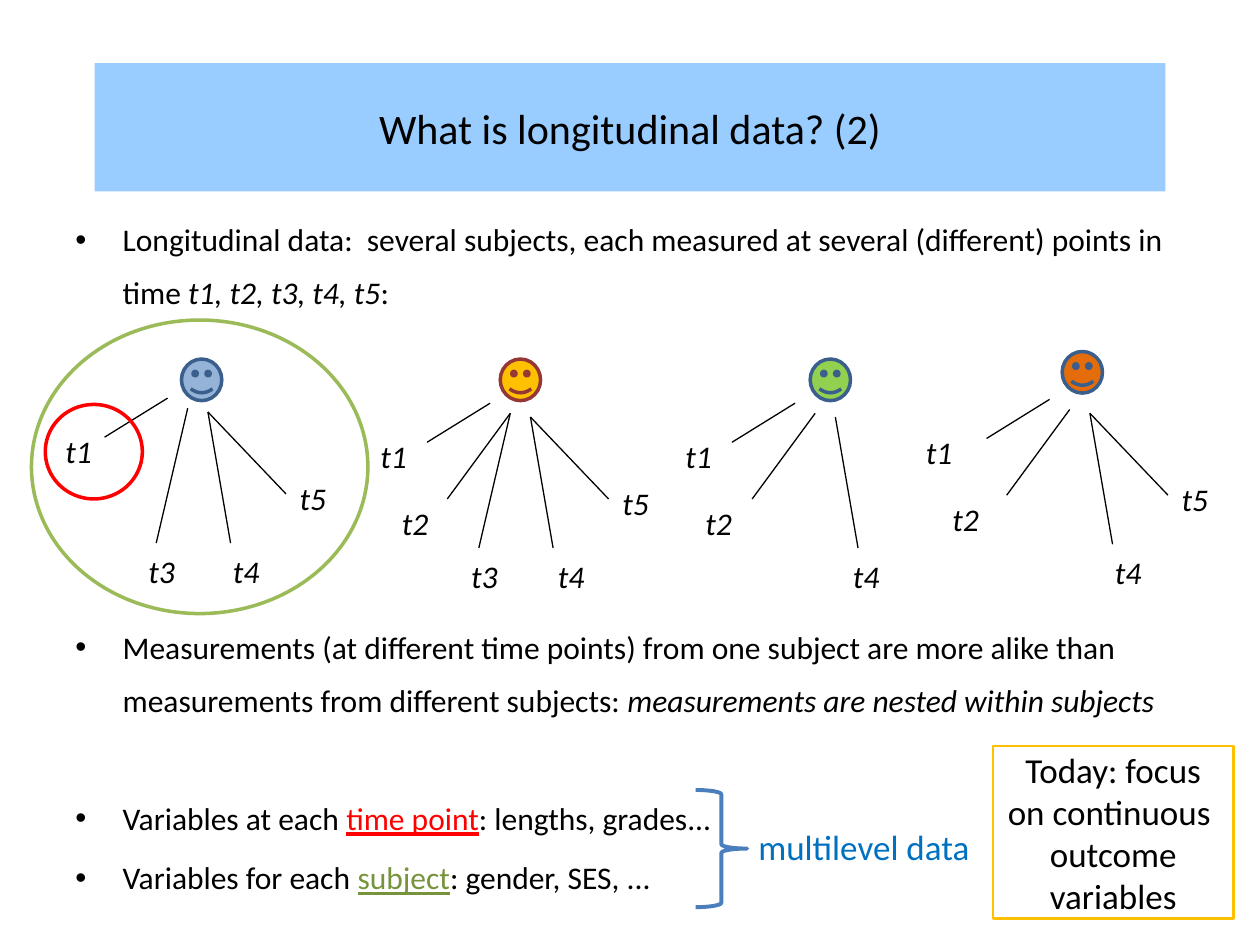
from dataclasses import dataclass

from lxml import etree
from pptx import Presentation
from pptx.dml.color import RGBColor
from pptx.enum.shapes import MSO_CONNECTOR, MSO_SHAPE
from pptx.enum.text import MSO_ANCHOR, PP_ALIGN
from pptx.oxml.ns import qn
from pptx.slide import Slide
from pptx.util import Inches, Pt

STRAIGHT = MSO_CONNECTOR.STRAIGHT
FACE, OVAL = MSO_SHAPE.SMILEY_FACE, MSO_SHAPE.OVAL
BRACE, RECTANGLE = MSO_SHAPE.RIGHT_BRACE, MSO_SHAPE.RECTANGLE
MIDDLE = MSO_ANCHOR.MIDDLE
CENTER, LEFT = PP_ALIGN.CENTER, PP_ALIGN.LEFT
TITLE_ONLY = 5

COLORS = {
    "black": "000000", "white": "FFFFFF", "banner": "99CCFF",
    "red": "FF0000", "olive": "77933C", "green": "9BBB59",
    "blue": "0070C0", "brace": "4B7EBC", "amber": "FFC000",
    "navy": "3A5F8C", "maroon": "953735", "sky": "95B3D7",
    "lime": "92D050", "orange": "E46C0A",
}

BULLETS = [
    (3.6, [
        ("Longitudinal data:  several subjects, each measured at several "
         "(different) points in time ", {}),
        ("t1, t2, t3, t4, t5", {"italic": True}),
        (":", {}),
    ]),
    (172.6, [
        ("Measurements (at different time points) from one subject are more "
         "alike than measurements from different subjects: ", {}),
        ("measurements are nested within subjects", {"italic": True}),
    ]),
    (37.3, [
        ("Variables at each ", {}),
        ("time point", {"color": "red", "underline": True}),
        (": lengths, grades...", {}),
    ]),
    (3.6, [
        ("Variables for each ", {}),
        ("subject", {"color": "olive", "underline": True}),
        (": gender, SES, ...", {}),
    ]),
]

BRANCHES = {
    "t1": (-0.32, -0.11, -0.82, 0.2),
    "t2": (-0.16, -0.03, -0.66, 0.65),
    "t3": (-0.16, -0.03, -0.41, 1.04),
    "t4": (0, 0, 0.18, 1.04),
    "t5": (0, 0, 0.62, 0.65),
}
LABEL_DROPS = {"t1": 0.11, "t2": 0.64, "t3": 1.06, "t4": 1.06, "t5": 0.48}

SUBJECTS = [
    ((1.65, 3.27), (1.44, 2.85), "sky", "navy",
     {"t1": 0.42, "t3": 1.08, "t4": 1.75, "t5": 2.28}),
    ((4.21, 3.31), (3.97, 2.85), "amber", "maroon",
     {"t1": 2.92, "t2": 3.09, "t3": 3.64, "t4": 4.33, "t5": 4.84}),
    ((6.63, 3.31), (6.43, 2.85), "lime", "navy",
     {"t1": 5.34, "t2": 5.5, "t4": 6.67}),
    ((8.65, 3.28), (8.43, 2.79), "orange", "navy",
     {"t1": 7.25, "t2": 7.46, "t4": 8.75, "t5": 9.28}),
]


def rgb(name):
    """Return the named colour."""
    return RGBColor.from_string(COLORS[name])


def add_text(paragraph, text, size=18, color="black", font="Calibri",
             italic=False, underline=False):
    """Add a formatted run to a paragraph."""
    run = paragraph.add_run()
    run.text = text
    run.font.name = font
    run.font.size = Pt(size)
    run.font.color.rgb = rgb(color)
    run.font.italic = italic
    run.font.underline = underline


@dataclass
class SlideBuilder:
    """Hold the style and the current slide, and add elements to it."""

    slide: Slide
    title_size: int = 24
    body_size: int = 18
    note_size: int = 20
    branch_width: float = 0.75

    def title(self, text, *box):
        """Place and format the title placeholder."""
        shape = self.slide.shapes.title
        shape.left, shape.top, shape.width, shape.height = map(Inches, box)
        shape.fill.solid()
        shape.fill.fore_color.rgb = rgb("banner")
        shape.text_frame.vertical_anchor = MIDDLE
        paragraph = shape.text_frame.paragraphs[0]
        paragraph.alignment = CENTER
        add_text(paragraph, text, size=self.title_size)

    def shape(self, kind, box, line, width=2, fill=None):
        """Add an outlined preset shape."""
        shape = self.slide.shapes.add_shape(kind, *map(Inches, box))
        shape.shadow.inherit = False
        shape.line.color.rgb = rgb(line)
        shape.line.width = Pt(width)
        if fill:
            shape.fill.solid()
            shape.fill.fore_color.rgb = rgb(fill)
        else:
            shape.fill.background()
        return shape

    def line(self, start, end):
        """Add a thin straight line."""
        points = map(Inches, (*start, *end))
        connector = self.slide.shapes.add_connector(STRAIGHT, *points)
        connector.line.color.rgb = rgb("black")
        connector.line.width = Pt(self.branch_width)
        etree.SubElement(connector._element.spPr, qn("a:effectLst"))

    def text_box(self, box, wrap=True):
        """Add an empty text box and return its frame."""
        frame = self.slide.shapes.add_textbox(*map(Inches, box)).text_frame
        frame.word_wrap = wrap
        return frame

    def label(self, text, box, wrap=False, **text_format):
        """Add a one-line text."""
        frame = self.text_box(box, wrap)
        add_text(frame.paragraphs[0], text, **text_format)

    def bullets(self, items, box):
        """Add a bulleted list with the given space before each item."""
        frame = self.text_box(box)
        for index, (space, runs) in enumerate(items):
            paragraph = frame.add_paragraph() if index else frame.paragraphs[0]
            paragraph.alignment = LEFT
            paragraph.line_spacing = 1.4
            paragraph.space_before = Pt(space)
            properties = paragraph._p.get_or_add_pPr()
            properties.set("marL", str(Inches(0.375)))
            properties.set("indent", str(-Inches(0.375)))
            etree.SubElement(properties, qn("a:buFont"), typeface="Arial")
            etree.SubElement(properties, qn("a:buChar"), char="•")
            for text, text_format in runs:
                add_text(paragraph, text, size=self.body_size, **text_format)

    def subject(self, origin, face, fill, line, labels):
        """Add a face with a branch and a label for each time point."""
        x, y = origin
        self.shape(FACE, (*face, 0.32, 0.33), line, fill=fill)
        for name, left in labels.items():
            x1, y1, x2, y2 = BRANCHES[name]
            self.line((x + x1, y + y1), (x + x2, y + y2))
            self.label(name, (left, y + LABEL_DROPS[name], 0.41, 0.4),
                       size=self.body_size, italic=True)

    def note(self, lines, box):
        """Add a framed note with centred text."""
        frame = self.shape(RECTANGLE, box, "amber", 1.5, "white").text_frame
        frame.word_wrap = True
        frame.vertical_anchor = MIDDLE
        for index, text in enumerate(lines):
            paragraph = frame.add_paragraph() if index else frame.paragraphs[0]
            paragraph.alignment = CENTER
            add_text(paragraph, text, size=self.note_size)


def main():
    """Build and save the presentation."""
    presentation = Presentation()
    presentation.slide_width = Inches(10)
    presentation.slide_height = Inches(7.5)
    layout = presentation.slide_layouts[TITLE_ONLY]
    builder = SlideBuilder(presentation.slides.add_slide(layout))

    builder.title("What is longitudinal data? (2)", 0.75, 0.5, 8.5, 1.02)
    builder.bullets(BULLETS, (0.5, 1.58, 9.15, 5.83))
    for subject in SUBJECTS:
        builder.subject(*subject)
    builder.shape(OVAL, (0.36, 3.21, 0.77, 0.75), "red")
    builder.shape(OVAL, (0.25, 2.54, 2.67, 2.33), "green")
    builder.shape(BRACE, (5.52, 6.27, 0.41, 0.93), "brace", 2.25)
    builder.label("multilevel data", (5.92, 6.5, 2.41, 0.69), wrap=True,
                  size=builder.note_size, color="blue")
    builder.note(["Today: focus on continuous ", "outcome variables"],
                 (7.88, 5.92, 1.91, 1.37))
    presentation.save("out.pptx")


if __name__ == "__main__":
    main()
